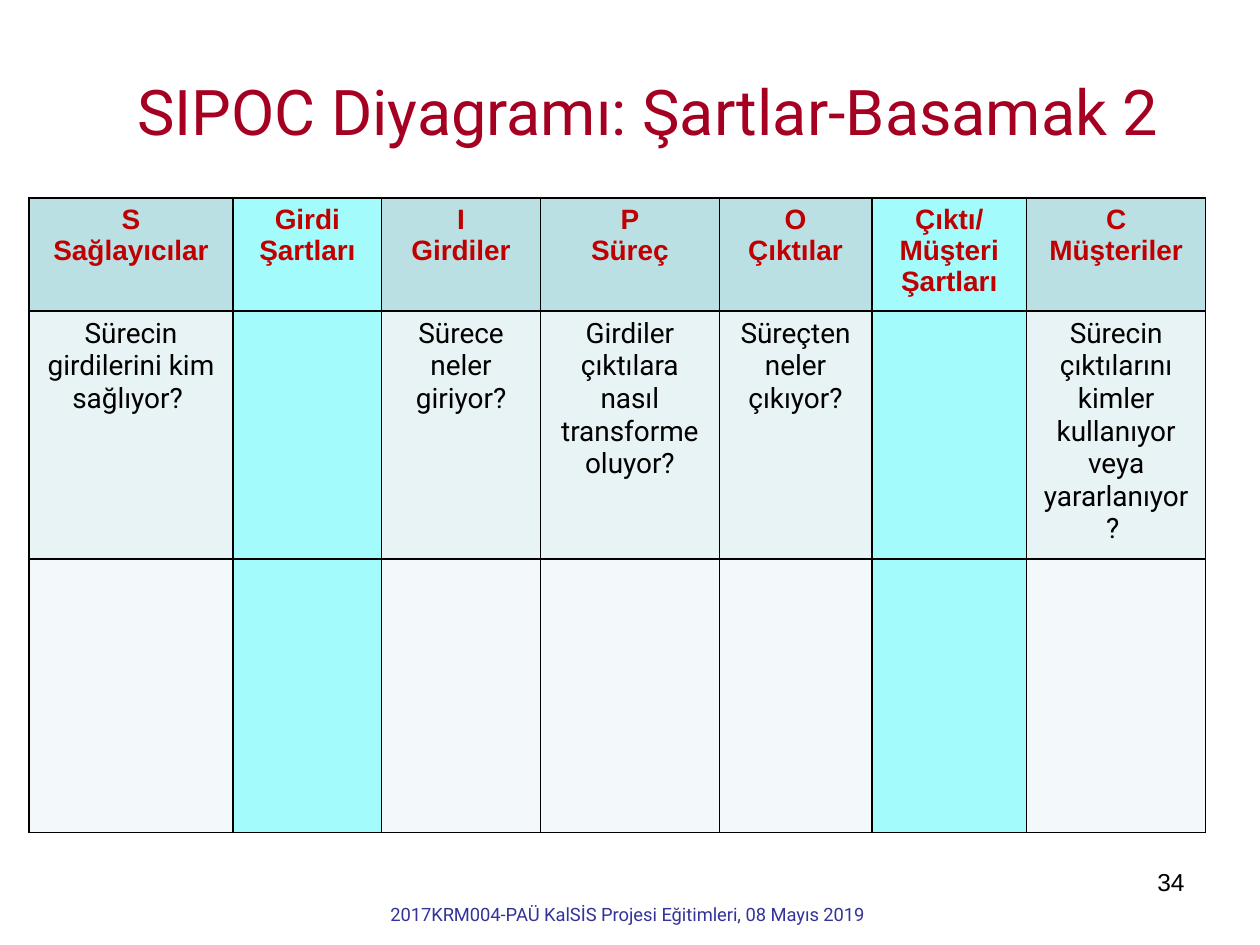
from lxml.etree import SubElement
from pptx import Presentation
from pptx.dml.color import RGBColor
from pptx.enum.text import MSO_ANCHOR as Anchor, PP_ALIGN as Align
from pptx.oxml.ns import qn
from pptx.util import Inches, Pt

COLORS = {
    "title": "A50021", "footer": "333399", "heading": "C00000", "ink": "000000",
    "header": "BBE0E3", "question": "E7F3F4", "answer": "F3F9FA", "requirement": "A3FBFB",
}
COLUMN_WIDTHS = [1.62, 1.18, 1.26, 1.42, 1.21, 1.23, 1.42]
ROW_HEIGHTS = [0.84, 1.91, 2.17]
REQUIREMENT_COLUMNS = (1, 5)
ROW_FILLS = ["header", "question", "answer"]
HEADINGS = [
    "S\nSağlayıcılar", "Girdi Şartları", "I\nGirdiler", "P\nSüreç",
    "O\nÇıktılar", "Çıktı/\nMüşteri Şartları", "C\nMüşteriler",
]
QUESTIONS = [
    "Sürecin girdilerini kim sağlıyor? ", "", "Sürece neler giriyor?",
    "Girdiler çıktılara nasıl transforme oluyor?", "Süreçten neler çıkıyor?", "",
    "Sürecin çıktılarını kimler kullanıyor veya yararlanıyor? ",
]


def write(frame, text, size, font, color, align=Align.CENTER, bold=False):
    frame.text = text
    frame.word_wrap = True
    for para in frame.paragraphs:
        para.alignment = align
        for span in para.runs:
            span.font.size = Pt(size)
            span.font.name = font
            span.font.bold = bold
            span.font.color.rgb = RGBColor.from_string(COLORS[color])


def add_borders(cell):
    properties = cell._tc.get_or_add_tcPr()
    for position, side in enumerate(("a:lnL", "a:lnR", "a:lnT", "a:lnB")):
        line = properties.makeelement(qn(side), {"w": str(Pt(1))})
        fill = SubElement(line, qn("a:solidFill"))
        SubElement(fill, qn("a:srgbClr"), val=COLORS["ink"])
        properties.insert(position, line)


deck = Presentation()
deck.slide_width, deck.slide_height = Inches(10), Inches(7.5)
page = deck.slides.add_slide(deck.slide_layouts[5])

title = page.shapes.title
title.left, title.top = Inches(0.57), Inches(0.52)
title.width, title.height = Inches(9.15), Inches(0.71)
write(title.text_frame, "SIPOC Diyagramı: Şartlar-Basamak 2", 36, "Roboto", "title")
title.text_frame.vertical_anchor = Anchor.MIDDLE

number_box = page.shapes.add_textbox(Inches(7.17), Inches(6.83), Inches(2.33), Inches(0.52))
write(number_box.text_frame, "34", 14, "Arial", "ink", Align.RIGHT)

footer_box = page.shapes.add_textbox(Inches(2.87), Inches(7.12), Inches(4.26), Inches(0.23))
write(footer_box.text_frame, "2017KRM004-PAÜ KalSİS Projesi Eğitimleri, 08 Mayıs 2019 ", 10.5, "Roboto", "footer")

table = page.shapes.add_table(
    len(ROW_HEIGHTS), len(COLUMN_WIDTHS), Inches(0.23), Inches(1.57),
    Inches(sum(COLUMN_WIDTHS)), Inches(sum(ROW_HEIGHTS)),
).table
for column, width in zip(table.columns, COLUMN_WIDTHS):
    column.width = Inches(width)

for row_index, height in enumerate(ROW_HEIGHTS):
    table.rows[row_index].height = Inches(height)
    for column_index in range(len(COLUMN_WIDTHS)):
        cell = table.cell(row_index, column_index)
        required = column_index in REQUIREMENT_COLUMNS
        fill_name = "requirement" if required else ROW_FILLS[row_index]
        cell.fill.solid()
        cell.fill.fore_color.rgb = RGBColor.from_string(COLORS[fill_name])
        add_borders(cell)
        if row_index == 0:
            write(cell.text_frame, HEADINGS[column_index], 16, "Arial", "heading", bold=True)
        elif row_index == 1:
            write(cell.text_frame, QUESTIONS[column_index], 16, "Roboto", "ink")

deck.save("out.pptx")
